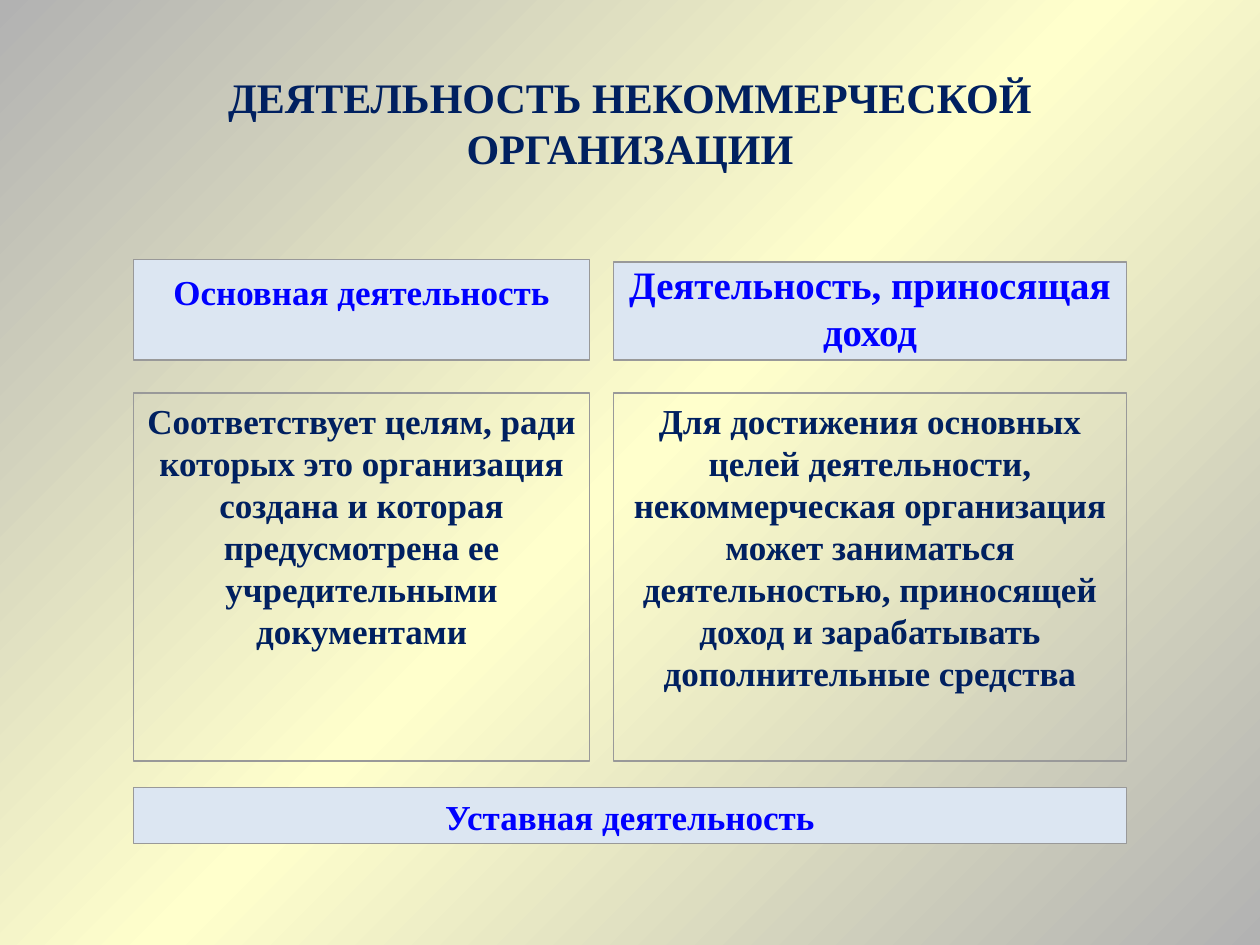
from lxml import etree
from pptx import Presentation
from pptx import util as u
from pptx.dml.color import RGBColor
from pptx.enum import shapes, text
from pptx.oxml import ns

NAVY, BLUE, PALE, GREY = "002060", "0000FF", "DCE6F2", "999999"
LEFT, WIDTH, GAP = 2.69, 20.02, 0.48
LEFT_COLUMN, RIGHT_COLUMN = 9.2, 10.34


def colour(value):
    """Turn a hex string into a colour."""
    return RGBColor.from_string(value)


def paint_background(slide, stops, angle):
    """Fill the slide background with a linear gradient."""
    fill = slide.background.fill
    fill.gradient()
    gradient = slide.background._cSld.find(".//" + ns.qn("a:gradFill"))
    stop_list = gradient.find(ns.qn("a:gsLst"))
    for old_stop in list(stop_list):
        stop_list.remove(old_stop)
    for position, value in stops:
        stop = etree.SubElement(stop_list, ns.qn("a:gs"), pos=str(position * 1000))
        etree.SubElement(stop, ns.qn("a:srgbClr"), val=value)
    direction = gradient.find(ns.qn("a:lin"))
    direction.set("ang", str(angle * 60000))
    direction.set("scaled", "0")


def place(shape, box):
    """Move a shape to a box of left, top, width and height in centimetres."""
    shape.left, shape.top, shape.width, shape.height = map(u.Cm, box)


def write(shape, words, size, value, anchor):
    """Put one bold centred paragraph without a bullet in a shape."""
    frame = shape.text_frame
    frame.text = words
    frame.word_wrap = True
    frame.auto_size = text.MSO_AUTO_SIZE.NONE
    frame.vertical_anchor = anchor
    paragraph = frame.paragraphs[0]
    paragraph.alignment = text.PP_ALIGN.CENTER
    paragraph.space_before = u.Pt(0)
    properties = paragraph._p.get_or_add_pPr()
    properties.set("marL", "0")
    properties.set("indent", "0")
    etree.SubElement(properties, ns.qn("a:buNone"))
    font = paragraph.runs[0].font
    font.name, font.size, font.bold = "Times New Roman", u.Pt(size), True
    font.color.rgb = colour(value)


def frame_box(shape, fill=None):
    """Give a shape a thin grey outline and an optional fill."""
    if fill:
        shape.fill.solid()
        shape.fill.fore_color.rgb = colour(fill)
    else:
        shape.fill.background()
    shape.line.color.rgb = colour(GREY)
    shape.line.width = u.Pt(0.75)


def add_title(shape, box, words):
    """Place the slide title."""
    place(shape, box)
    write(shape, words, 24, NAVY, text.MSO_ANCHOR.MIDDLE)


def add_column(heading, body, box, heading_height, heading_words, heading_size, body_words):
    """Place a filled heading above an outlined description."""
    left, top, width, height = box
    body_height = 7.42
    place(heading, (left, top, width, heading_height))
    frame_box(heading, PALE)
    write(heading, heading_words, heading_size, BLUE, text.MSO_ANCHOR.BOTTOM)
    place(body, (left, top + height - body_height, width, body_height))
    frame_box(body)
    write(body, body_words, 20, NAVY, text.MSO_ANCHOR.TOP)


def add_summary(slide, box, words):
    """Add the full-width bar below the columns."""
    shape = slide.shapes.add_shape(shapes.MSO_SHAPE.RECTANGLE, *map(u.Cm, box))
    shape.shadow.inherit = False
    frame_box(shape, PALE)
    write(shape, words, 20, BLUE, text.MSO_ANCHOR.BOTTOM)


def main():
    """Build and save the presentation."""
    presentation = Presentation()
    presentation.slide_width, presentation.slide_height = u.Cm(25.4), u.Cm(19.05)
    slide = presentation.slides.add_slide(presentation.slide_layouts.get_by_name("Comparison"))
    title, left_heading, left_body, right_heading, right_body = slide.placeholders
    paint_background(slide, [(0, "B2B2B2"), (50, "FFFFCC"), (100, "B2B2B2")], 45)
    add_title(title, (LEFT, 0.94, WIDTH, 3.05), "ДЕЯТЕЛЬНОСТЬ НЕКОММЕРЧЕСКОЙ ОРГАНИЗАЦИИ")
    add_column(left_heading, left_body, (LEFT, 5.23, LEFT_COLUMN, 10.11), 2.03,
               "Основная деятельность", 20,
               "Соответствует целям, ради которых это организация создана "
               "и которая предусмотрена ее учредительными документами")
    left_heading.text_frame.margin_bottom = u.Cm(0.95)
    add_column(right_heading, right_body,
               (LEFT + LEFT_COLUMN + GAP, 5.28, RIGHT_COLUMN, 10.06), 1.98,
               "Деятельность, приносящая доход", 22.2,
               "Для достижения основных целей деятельности, некоммерческая организация "
               "может заниматься деятельностью, приносящей доход и зарабатывать "
               "дополнительные средства")
    add_summary(slide, (LEFT, 15.88, WIDTH, 1.12), "Уставная деятельность")
    presentation.save("out.pptx")


if __name__ == "__main__":
    main()
